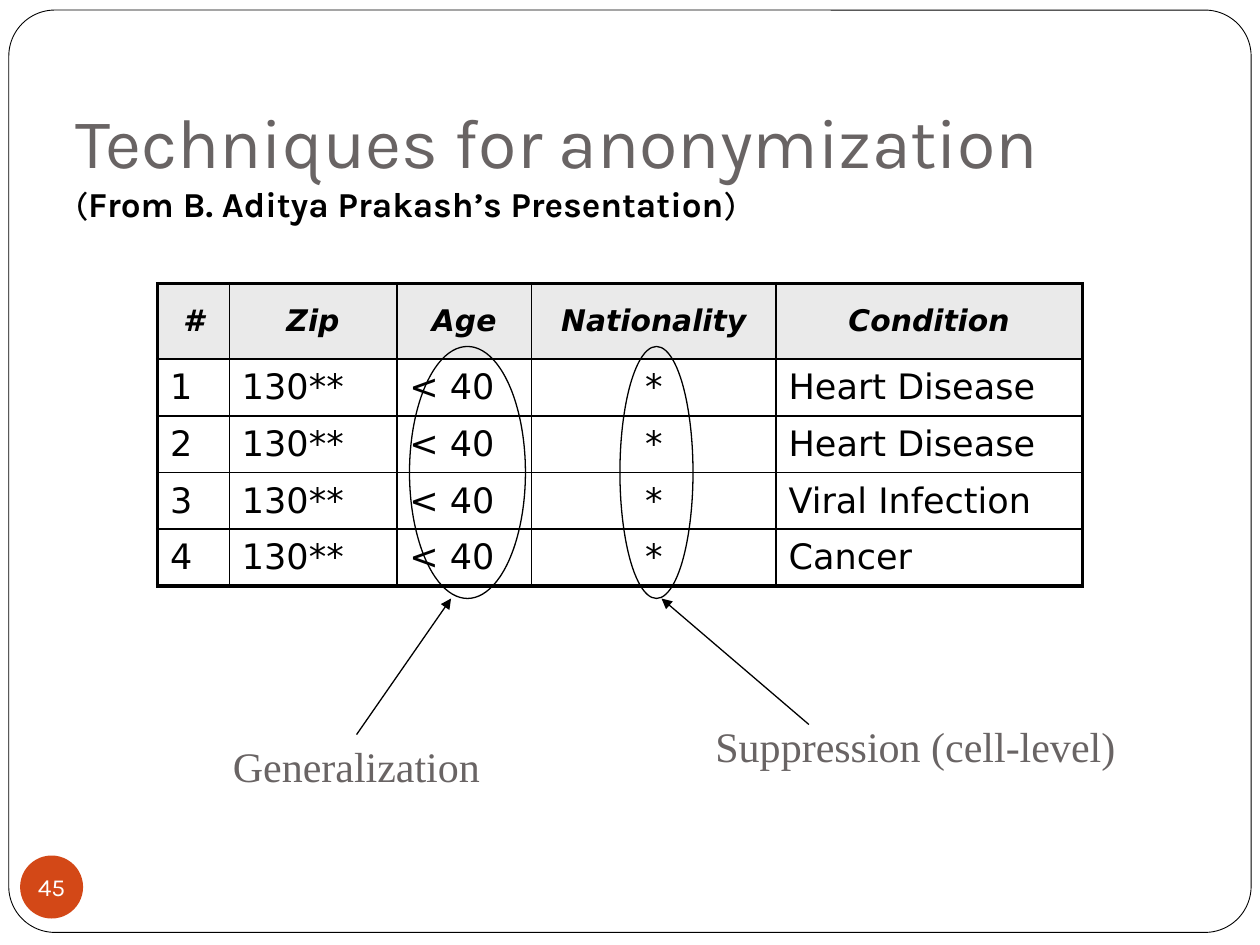
"""Build the slide on generalization and suppression for anonymization."""
from typing import NamedTuple

from lxml.etree import SubElement
from pptx import Presentation
from pptx.dml.color import RGBColor
from pptx.enum.shapes import MSO_CONNECTOR, MSO_SHAPE
from pptx.enum.text import MSO_ANCHOR, MSO_AUTO_SIZE, PP_ALIGN
from pptx.oxml.ns import qn
from pptx.util import Inches, Pt

BLACK, WHITE, GRAY = "000000", "FFFFFF", "696464"
HEADER_FILL, ORANGE = "EAEAEA", "D34817"
TABLE_FONT = "DejaVu Sans"
COLUMN_WIDTHS = (0.57, 1.33, 1.07, 1.94, 2.43)
ROW_HEIGHTS = (0.6, 0.45, 0.45, 0.45, 0.45)
CONDITIONS = ("Heart Disease", "Heart Disease", "Viral Infection", "Cancer")
ROWS = [("#", "Zip", "Age", "Nationality", "Condition")] + [
    (str(number), "130**", "< 40", "*", condition)
    for number, condition in enumerate(CONDITIONS, start=1)
]


class Box(NamedTuple):
    left: float
    top: float
    width: float
    height: float


class Callout(NamedTuple):
    text: str
    label: Box
    ring: Box
    arrow_start: tuple[float, float]
    arrow_end: tuple[float, float]


CALLOUTS = (
    Callout("Generalization", Box(1.75, 5.83, 2.35, 0.5), Box(3.25, 2.75, 0.92, 2),
            (2.83, 5.83), (3.58, 4.75)),
    Callout("Suppression (cell-level)", Box(5.58, 5.67, 3.67, 0.5), Box(4.92, 2.75, 0.58, 2),
            (6.42, 5.75), (5.25, 4.75)),
)


def color(value: str) -> RGBColor:
    return RGBColor.from_string(value)


def inches(lengths: tuple) -> list:
    return [Inches(length) for length in lengths]


def format_run(run, size: float, font: str, text_color: str,
               bold: bool = False, italic: bool = False) -> None:
    run.font.size, run.font.name = Pt(size), font
    run.font.bold, run.font.italic = bold, italic
    run.font.color.rgb = color(text_color)


def add_outline(slide, kind, box: Box, fill: str | None = None,
                line_width: float | None = None):
    shape = slide.shapes.add_shape(kind, *inches(box))
    shape.shadow.inherit = False
    if fill:
        shape.fill.solid()
        shape.fill.fore_color.rgb = color(fill)
    else:
        shape.fill.background()
    if line_width:
        shape.line.color.rgb = color(BLACK)
        shape.line.width = Pt(line_width)
    else:
        shape.line.fill.background()
    return shape


def set_title(slide) -> None:
    title = slide.shapes.title
    title.left, title.top, title.width, title.height = inches((0.5, 0.21, 9.17, 1.67))
    frame = title.text_frame
    frame.auto_size = MSO_AUTO_SIZE.NONE
    frame.word_wrap = True
    frame.vertical_anchor = MSO_ANCHOR.BOTTOM
    frame.margin_bottom = Inches(0.1)
    paragraph = frame.paragraphs[0]
    paragraph.alignment = PP_ALIGN.LEFT
    heading = paragraph.add_run()
    heading.text = "Techniques for anonymization"
    format_run(heading, 40, "Karla", GRAY)
    paragraph.add_line_break()
    for text, bold in (("(", False), ("From B. Aditya Prakash’s Presentation", True), (")", False)):
        run = paragraph.add_run()
        run.text = text
        format_run(run, 20, "Karla", BLACK, bold)


def set_border(cell, side: str, width: float) -> None:
    line = SubElement(cell._tc.get_or_add_tcPr(), qn(f"a:ln{side}"), w=str(Pt(width)))
    SubElement(SubElement(line, qn("a:solidFill")), qn("a:srgbClr"), val=BLACK)


def add_data_table(slide) -> None:
    last_row, last_column = len(ROWS) - 1, len(COLUMN_WIDTHS) - 1
    table = slide.shapes.add_table(
        len(ROWS), len(COLUMN_WIDTHS), *inches((1.25, 2.25, 7.33, 2.42))).table
    for column, width in zip(table.columns, COLUMN_WIDTHS):
        column.width = Inches(width)
    for row, height in zip(table.rows, ROW_HEIGHTS):
        row.height = Inches(height)
    for row_index, texts in enumerate(ROWS):
        is_header = row_index == 0
        for column_index, text in enumerate(texts):
            cell = table.cell(row_index, column_index)
            edges = {"L": column_index == 0, "R": column_index == last_column,
                     "T": is_header, "B": row_index == last_row}
            for side, is_outer in edges.items():
                set_border(cell, side, 2.25 if is_outer else 1)
            cell.fill.solid()
            cell.fill.fore_color.rgb = color(HEADER_FILL if is_header else WHITE)
            cell.vertical_anchor = MSO_ANCHOR.MIDDLE
            cell.text_frame.text = text
            paragraph = cell.text_frame.paragraphs[0]
            paragraph.space_before = Pt(4)
            centered = is_header or text == "*"
            paragraph.alignment = PP_ALIGN.CENTER if centered else PP_ALIGN.LEFT
            format_run(paragraph.runs[0], 17 if is_header else 20, TABLE_FONT, BLACK,
                       is_header, is_header)


def add_arrow(slide, start: tuple[float, float], end: tuple[float, float]) -> None:
    arrow = slide.shapes.add_connector(MSO_CONNECTOR.STRAIGHT, *inches(start + end))
    arrow.line.color.rgb = color(BLACK)
    arrow.line.width = Pt(0.75)
    SubElement(arrow.line._get_or_add_ln(), qn("a:tailEnd"), type="triangle")
    SubElement(arrow.element.spPr, qn("a:effectLst"))


def add_callout(slide, callout: Callout) -> None:
    add_outline(slide, MSO_SHAPE.OVAL, callout.ring, line_width=0.75)
    add_arrow(slide, callout.arrow_start, callout.arrow_end)
    frame = slide.shapes.add_textbox(*inches(callout.label)).text_frame
    frame.word_wrap = False
    frame.auto_size = MSO_AUTO_SIZE.SHAPE_TO_FIT_TEXT
    frame.text = callout.text
    format_run(frame.paragraphs[0].runs[0], 24, "Times New Roman", GRAY)


def add_page_number(slide) -> None:
    badge = add_outline(slide, MSO_SHAPE.OVAL, Box(0.16, 6.79, 0.5, 0.5), fill=ORANGE)
    frame = badge.text_frame
    frame.margin_left = frame.margin_right = frame.margin_top = frame.margin_bottom = 0
    frame.word_wrap = False
    frame.vertical_anchor = MSO_ANCHOR.MIDDLE
    frame.text = "45"
    paragraph = frame.paragraphs[0]
    paragraph.alignment = PP_ALIGN.CENTER
    format_run(paragraph.runs[0], 14, "Karla", WHITE)


def main() -> None:
    presentation = Presentation()
    presentation.slide_width, presentation.slide_height = Inches(10), Inches(7.5)
    slide = presentation.slides.add_slide(presentation.slide_layouts[5])
    border = add_outline(slide, MSO_SHAPE.ROUNDED_RECTANGLE,
                         Box(0.07, 0.08, 9.86, 7.32), WHITE, 0.5)
    border.adjustments[0] = 0.05
    slide.shapes.title.element.addprevious(border.element)
    set_title(slide)
    add_page_number(slide)
    add_data_table(slide)
    for callout in CALLOUTS:
        add_callout(slide, callout)
    presentation.save("out.pptx")


if __name__ == "__main__":
    main()
